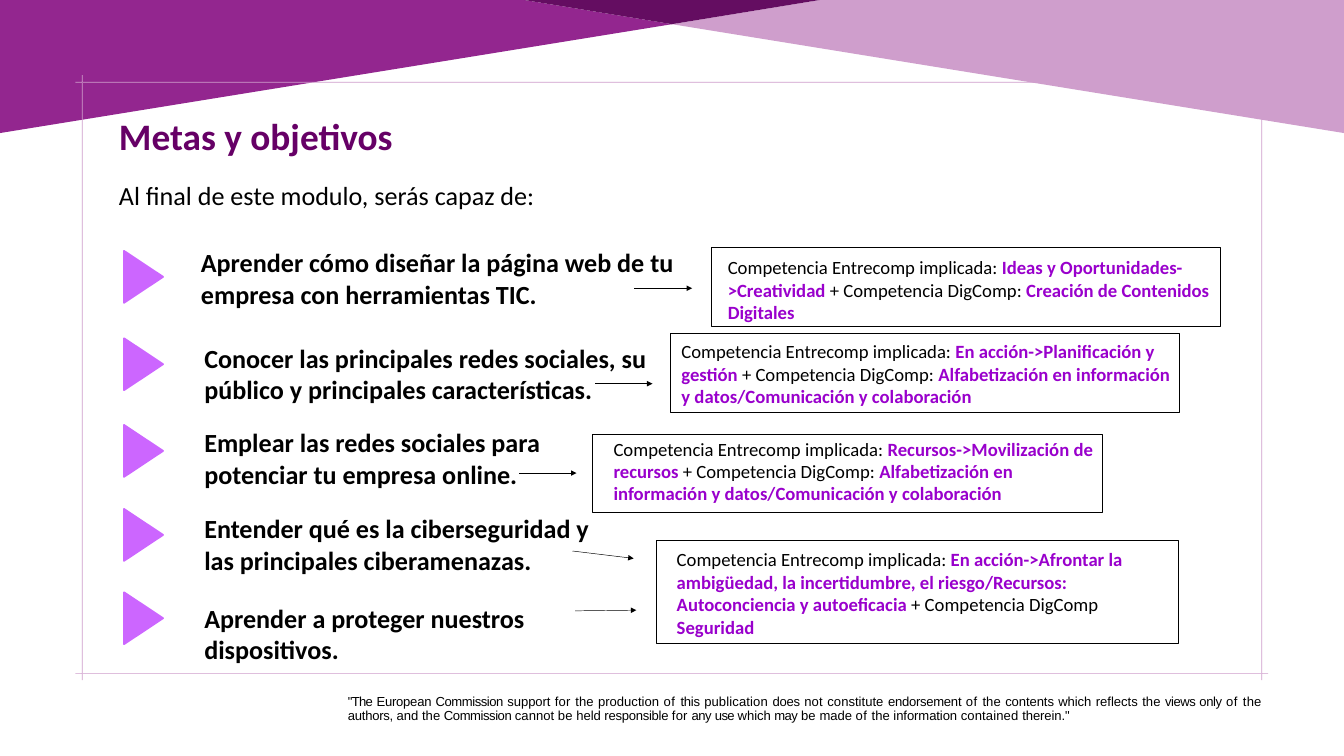
"""Build the "Metas y objetivos" slide: goals with their linked competences."""
from lxml import etree
from pptx import Presentation
from pptx.dml.color import RGBColor
from pptx.enum import shapes, text
from pptx.oxml.ns import qn
from pptx.util import Emu, Inches, Pt

COLUMNS, ROWS = 20, 11.25
PURPLE, LIGHT, DARK = "93268F", "CF9ECC", "640D61"
TITLE, MARKER, ACCENT, BLACK = "660066", "CC66FF", "9900CC", "000000"

BANDS = [
    (PURPLE, [(0, 0), (7.8, 0), (10, 0.36), (0, 1.98)]),
    (LIGHT, [(20, 1.98), (10, 0.36), (12.2, 0), (20, 0)]),
    (DARK, [(7.8, 0), (12.2, 0), (10, 0.36)]),
]
FRAME_LEFT, FRAME_TOP, FRAME_RIGHT, FRAME_BOTTOM = 1.22, 1.22, 18.77, 10.02
FRAME_LINE, FRAME_OVERHANG = 0.01, 0.1

HEADING = "Metas y objetivos"
INTRO = "Al final de este modulo, serás capaz de: "

# Goal text, its box, and the top of its marker
GOALS = [
    ("Aprender cómo diseñar la página web de tu empresa con herramientas TIC.",
     (2.87, 3.62, 7.58, 1.04), 3.83),
    ("Conocer las principales redes sociales, su público y principales características.",
     (2.92, 5.04, 7.54, 1.04), 5.13),
    ("Emplear las redes sociales para potenciar tu empresa online.",
     (2.92, 6.3, 5.6, 1.04), 6.42),
    ("Entender qué es la ciberseguridad y las principales ciberamenazas.",
     (2.92, 7.58, 6.1, 1.04), 7.67),
    ("Aprender a proteger nuestros dispositivos.",
     (2.92, 8.91, 7.08, 0.57), 8.91),
]

ENTRECOMP = "Competencia Entrecomp implicada: "
DIGCOMP = "+ Competencia DigComp: "
LITERACY = "Alfabetización en información y datos/Comunicación y colaboración"
# Plain and accented runs in turn, text box, outline box
COMPETENCES = [
    ([ENTRECOMP, "Ideas y Oportunidades->Creatividad ", DIGCOMP,
      "Creación de Contenidos Digitales"],
     (10.71, 3.76, 7.58, 1.11), (10.58, 3.68, 7.58, 1.17)),
    ([ENTRECOMP, "En acción->Planificación y gestión", " " + DIGCOMP, LITERACY],
     (10.02, 5.01, 7.58, 1.11), (9.97, 4.96, 7.58, 1.17)),
    ([ENTRECOMP, "Recursos->Movilización de recursos", " " + DIGCOMP, LITERACY],
     (9.01, 6.46, 7.58, 1.11), (8.82, 6.46, 7.58, 1.17)),
    ([ENTRECOMP, "En acción->Afrontar la ambigüedad, la incertidumbre, el riesgo/Recursos: "
      "Autoconciencia y autoeficacia ", "+ Competencia DigComp ", "Seguridad"],
     (9.95, 8.11, 7.58, 1.45), (9.77, 8.04, 7.77, 1.53)),
]
ARROWS = [
    (9.44, 4.29, 10.3, 4.29),
    (8.86, 5.71, 9.71, 5.71),
    (7.73, 7.04, 8.58, 7.04),
    (8.52, 8.2, 9.43, 8.31),
    (8.56, 9.09, 9.47, 9.08),
]

# Disclaimer runs with their letter spacing in points
DISCLAIMER = [
    ('"The ', -0.8), ("European ", -0.3), ("Commission ", -0.5), ("support ", -0.1),
    ("for ", 0.2), ("the production ", 0), ("of ", 0.5), ("this ", -0.3),
    ("publication ", 0.1), ("does ", -0.3), ("not ", 0.1), ("constitute ", 0),
    ("endorsement ", -0.3), ("of ", 0.5), ("the ", 0), ("contents which ", -0.1),
    ("reflects the ", 0), ("views only ", -0.5), ("of t", 0.5), ("he ", 0),
    ("authors, ", -0.3), ("and the ", 0), ("Commission ", -0.5), ("cannot ", 0),
    ("be ", 0.1), ("held ", -0.1), ("responsible ", -0.3), ("for ", 0.2),
    ("any ", -0.5), ("use ", -0.7), ("which ", -0.1), ("may ", -0.6), ("be ", 0.1),
    ("made ", -0.1), ("of ", 0.5), ("the ", 0), ("information ", -0.1),
    ("contained ", 0.1), ('therein."', -0.1),
]


def color(value):
    return RGBColor.from_string(value)


def place(box):
    return [Inches(length) for length in box]


def paint(shape, fill=None, line=None, width=0.75):
    shape.shadow.inherit = False
    if fill:
        shape.fill.solid()
        shape.fill.fore_color.rgb = color(fill)
    else:
        shape.fill.background()
    if line:
        shape.line.color.rgb = color(line)
        shape.line.width = Pt(width)
    else:
        shape.line.fill.background()


def add_outline(slide, contours, fill):
    contours = [[tuple(place(point)) for point in contour] for contour in contours]
    builder = slide.shapes.build_freeform(*contours[0][0], scale=1.0)
    for index, (start, *others) in enumerate(contours):
        if index:
            builder.move_to(*start)
        builder.add_line_segments(others, close=True)
    paint(builder.convert_to_shape(), fill)


def add_run(paragraph, words, size, fill=BLACK, bold=False, font="Calibri"):
    run = paragraph.add_run()
    run.text = words
    run.font.name, run.font.size, run.font.bold = font, Pt(size), bold
    run.font.color.rgb = color(fill)
    return run


def prepare(shape, align=text.PP_ALIGN.LEFT, side=0.1):
    frame = shape.text_frame
    frame.word_wrap = True
    frame.auto_size = text.MSO_AUTO_SIZE.SHAPE_TO_FIT_TEXT
    frame.vertical_anchor = text.MSO_ANCHOR.TOP
    frame.margin_left = frame.margin_right = Inches(side)
    frame.margin_top = frame.margin_bottom = Inches(0.05)
    paragraph = frame.paragraphs[0]
    paragraph.alignment = align
    paragraph.space_before = Pt(0)
    return paragraph


def fill_placeholder(shape, box, align):
    shape.left, shape.top, shape.width, shape.height = place(box)
    return prepare(shape, align)


def add_arrow(slide, ends):
    arrow = slide.shapes.add_connector(shapes.MSO_CONNECTOR.STRAIGHT, *place(ends))
    arrow.line.color.rgb = color(BLACK)
    arrow.line.width = Pt(0.5)
    etree.SubElement(arrow.line._get_or_add_ln(), qn("a:tailEnd"), type="triangle")
    etree.SubElement(arrow._element.spPr, qn("a:effectLst"))


def strip(left, top, right, bottom):
    return [(left, top), (right, top), (right, bottom), (left, bottom)]


def add_background(slide):
    for fill, points in BANDS:
        add_outline(slide, [points], fill)
    rows = [strip(FRAME_LEFT - FRAME_OVERHANG, y, FRAME_RIGHT + FRAME_OVERHANG, y + FRAME_LINE)
            for y in (FRAME_TOP, FRAME_BOTTOM)]
    columns = [strip(x, FRAME_TOP - FRAME_OVERHANG, x + FRAME_LINE, FRAME_BOTTOM + FRAME_OVERHANG)
               for x in (FRAME_LEFT, FRAME_RIGHT)]
    add_outline(slide, rows + columns, LIGHT)


def add_heading(slide):
    paragraph = fill_placeholder(slide.shapes.title, (1.67, 1.64, 10.35, 0.77),
                                 text.PP_ALIGN.LEFT)
    add_run(paragraph, HEADING, 40, TITLE, True)
    paragraph = fill_placeholder(slide.placeholders[1], (1.67, 2.62, 10.98, 0.57),
                                 text.PP_ALIGN.JUSTIFY)
    properties = paragraph._p.get_or_add_pPr()
    properties.set("marL", "0")
    properties.set("indent", "0")
    etree.SubElement(properties, qn("a:buNone"))
    add_run(paragraph, INTRO, 28)


def add_disclaimer(slide):
    box = slide.shapes.add_textbox(*place((5.08, 10.29, 13.79, 0.52)))
    paragraph = prepare(box, text.PP_ALIGN.JUSTIFY)
    paragraph.line_spacing = Pt(14.9)
    for words, spacing in DISCLAIMER:
        run = add_run(paragraph, words, 14, font="Arial")
        run._r.get_or_add_rPr().set("spc", str(round(spacing * 100)))


def main():
    presentation = Presentation()
    presentation.slide_width, presentation.slide_height = place((COLUMNS, ROWS))
    slide = presentation.slides.add_slide(presentation.slide_layouts[1])
    add_background(slide)
    add_heading(slide)
    add_disclaimer(slide)
    for goal, box, marker_top in GOALS:
        marker = slide.shapes.add_shape(shapes.MSO_SHAPE.ISOSCELES_TRIANGLE,
                                        *place((1.75, marker_top, 0.77, 0.58)))
        marker.rotation = 90
        paint(marker, MARKER, MARKER, 2)
        paragraph = prepare(slide.shapes.add_textbox(*place(box)), side=0.12)
        add_run(paragraph, goal, 28, bold=True)
    for runs, text_box, outline in COMPETENCES:
        paint(slide.shapes.add_shape(shapes.MSO_SHAPE.RECTANGLE, *place(outline)), line=BLACK)
        paragraph = prepare(slide.shapes.add_textbox(*place(text_box)), side=0.12)
        for index, words in enumerate(runs):
            accented = index % 2 == 1
            add_run(paragraph, words, 20, ACCENT if accented else BLACK, accented)
    for ends in ARROWS:
        add_arrow(slide, ends)
    presentation.save("out.pptx")


if __name__ == "__main__":
    main()
